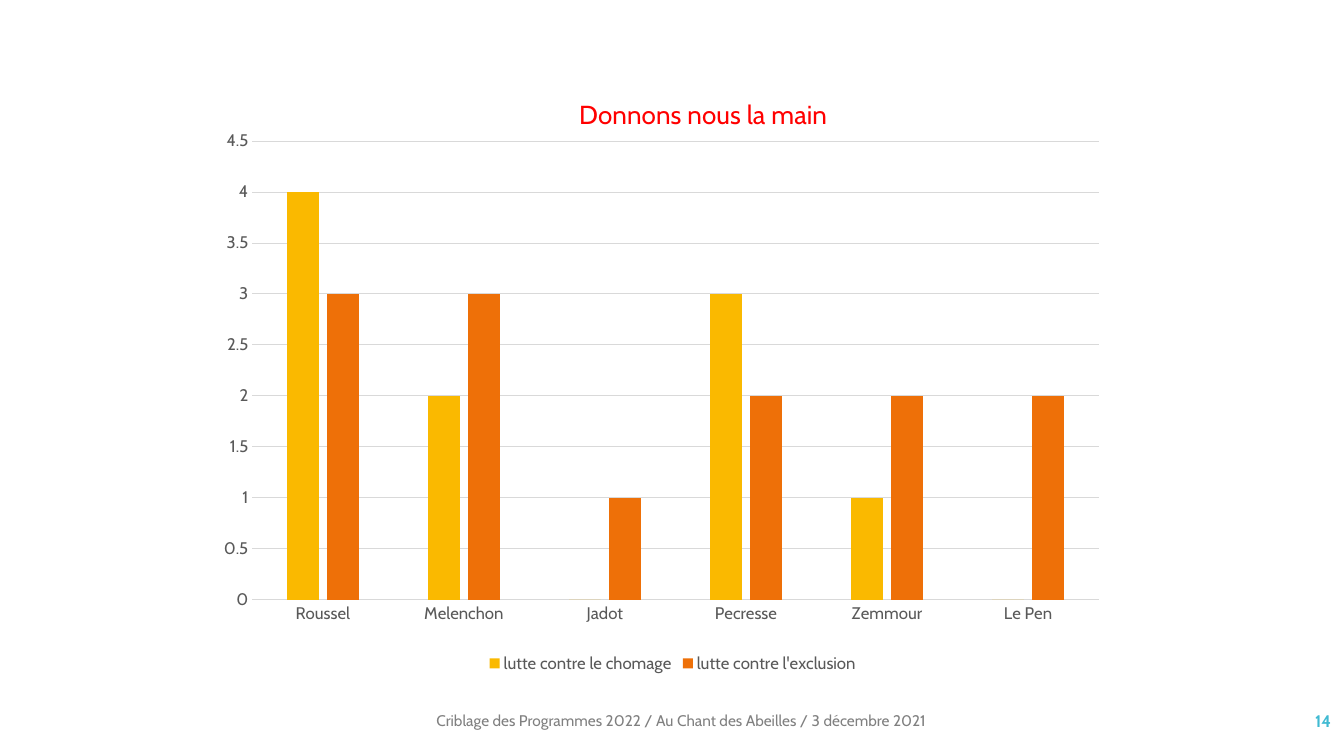
from lxml import etree
from pptx import Presentation
from pptx import util as u
from pptx.chart.data import CategoryChartData
from pptx.dml.color import RGBColor
from pptx.enum import chart as ch, text
from pptx.oxml.ns import qn

FONT = "Cabin"
RED = RGBColor(0xFF, 0x00, 0x00)
GREY = RGBColor(0x80, 0x80, 0x80)
DARK = RGBColor(0x59, 0x59, 0x59)
LIGHT = RGBColor(0xD9, 0xD9, 0xD9)
BLUE = RGBColor(0x40, 0xBA, 0xD2)
YELLOW = RGBColor(0xFA, 0xB9, 0x00)
ORANGE = RGBColor(0xEE, 0x70, 0x08)

# Content
CHART_TITLE = "Donnons nous la main"
CANDIDATES = ["Roussel", "Melenchon", "Jadot", "Pecresse", "Zemmour", "Le Pen"]
SERIES = [
    ("lutte contre le chomage", (4, 2, 0, 3, 1, 0), YELLOW),
    ("lutte contre l'exclusion", (3, 3, 1, 2, 2, 2), ORANGE),
]
CHART_BOX = (2.22, 0.79, 8.89, 5.93)
FOOTERS = [
    ("Criblage des Programmes 2022 / Au Chant des Abeilles / 3 décembre 2021",
     (4.23, 6.95, 6.46, 0.4), text.PP_ALIGN.LEFT, {"size": 11, "color": GREY}),
    ("14", (11.63, 6.95, 1.67, 0.4), text.PP_ALIGN.RIGHT,
     {"size": 12, "color": BLUE, "bold": True}),
]


def inches(box):
    return [u.Inches(value) for value in box]


def format_font(font, size, color, bold=False):
    values = {"name": FONT, "size": u.Pt(size), "bold": bold}
    for name, value in values.items():
        setattr(font, name, value)
    font.color.rgb = color


def format_line(line, color):
    line.color.rgb = color
    line.width = u.Pt(0.75)


def place(parent, index, settings):
    """Give a chart part a manual layout, in fractions of the chart."""
    for old in parent.findall(qn("c:layout")):
        parent.remove(old)
    layout = etree.Element(qn("c:layout"))
    manual = etree.SubElement(layout, qn("c:manualLayout"))
    for name, value in settings.items():
        etree.SubElement(manual, qn(f"c:{name}")).set("val", str(value))
    parent.insert(index, layout)


def add_footer(page, words, box, align, style):
    frame = page.shapes.add_textbox(*inches(box)).text_frame
    frame.word_wrap = True
    frame.vertical_anchor = text.MSO_ANCHOR.MIDDLE
    para = frame.paragraphs[0]
    para.alignment = align
    span = para.add_run()
    span.text = words
    format_font(span.font, **style)


def add_scores(page):
    data = CategoryChartData()
    data.categories = CANDIDATES
    for name, values, _ in SERIES:
        data.add_series(name, values)
    chart = page.shapes.add_chart(
        ch.XL_CHART_TYPE.COLUMN_CLUSTERED, *inches(CHART_BOX), data).chart
    format_font(chart.font, 12, DARK)

    # Title
    chart.has_title = True
    title = chart.chart_title
    para = title.text_frame.paragraphs[0]
    span = para.add_run()
    span.text = CHART_TITLE
    format_font(span.font, 18.6, RED)
    place(title._element, 1,
          {"xMode": "edge", "yMode": "edge", "x": 0.39, "y": 0.02})

    # Columns
    plot = chart.plots[0]
    for name, value in {"gap_width": 219, "overlap": -27,
                        "vary_by_categories": False}.items():
        setattr(plot, name, value)
    for series, (_, _, color) in zip(plot.series, SERIES):
        series.format.fill.solid()
        series.format.fill.fore_color.rgb = color
    plot_area = chart._chartSpace.find(".//" + qn("c:plotArea"))
    place(plot_area, 0, {"layoutTarget": "inner", "xMode": "edge",
                         "yMode": "edge", "x": 0.03, "y": 0.103,
                         "w": 0.946, "h": 0.767})

    # Axes
    for axis in (chart.category_axis, chart.value_axis):
        axis.major_tick_mark = axis.minor_tick_mark = ch.XL_TICK_MARK.NONE
        format_font(axis.tick_labels.font, 12, DARK)
    format_line(chart.category_axis.format.line, LIGHT)
    scale = chart.value_axis
    scale.minimum_scale, scale.maximum_scale, scale.major_unit = 0, 4.5, 0.5
    scale.format.line.fill.background()
    format_line(scale.major_gridlines.format.line, LIGHT)

    # Legend
    chart.has_legend = True
    chart.legend.position = ch.XL_LEGEND_POSITION.BOTTOM
    chart.legend.include_in_layout = False
    format_font(chart.legend.font, 12, DARK)


def main():
    deck = Presentation()
    deck.slide_width, deck.slide_height = inches((13.33, 7.5))
    page = deck.slides.add_slide(deck.slide_layouts[6])
    for footer in FOOTERS:
        add_footer(page, *footer)
    add_scores(page)
    deck.save("out.pptx")


if __name__ == "__main__":
    main()
